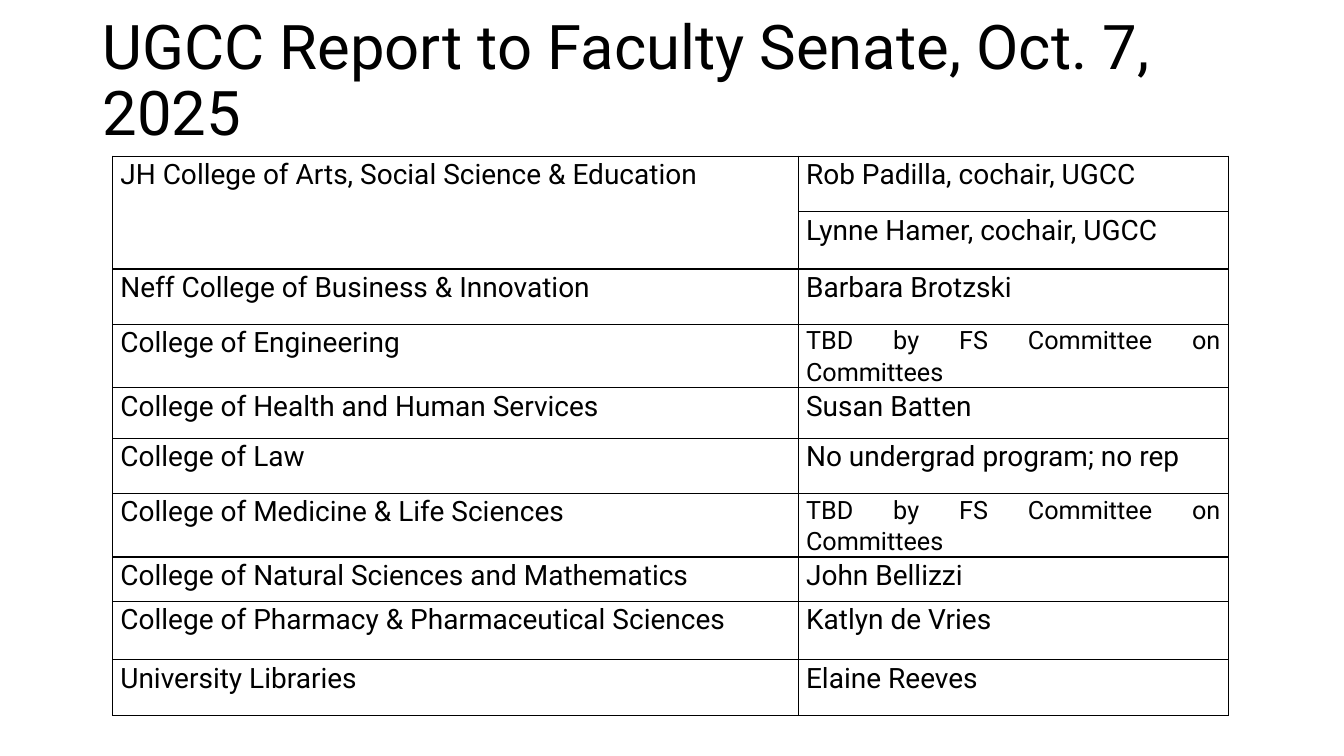
import pptx
import pptx.util
import pptx.dml.color
import pptx.enum.text
import lxml.etree
from pptx.util import Pt


def color(value):
    return pptx.dml.color.RGBColor.from_string(value)


def add_borders(cell):
    tcPr = cell._tc.get_or_add_tcPr()
    ns = "http://schemas.openxmlformats.org/drawingml/2006/main"
    for i, side in enumerate(("lnL", "lnR", "lnT", "lnB")):
        ln = lxml.etree.Element(f"{{{ns}}}{side}", w=str(Pt(1)))
        fill = lxml.etree.SubElement(ln, f"{{{ns}}}solidFill")
        lxml.etree.SubElement(fill, f"{{{ns}}}srgbClr", val="000000")
        tcPr.insert(i, ln)


prs = pptx.Presentation()
prs.slide_width, prs.slide_height = Pt(960), Pt(540)
s = prs.slides.add_slide(prs.slide_layouts[5])

title = s.shapes.title
title.left, title.top, title.width, title.height = Pt(66), Pt(31), Pt(828), Pt(56)
tf = title.text_frame
tf.text = "UGCC Report to Faculty Senate, Oct. 7, 2025"
tf.word_wrap = True
tf.auto_size = pptx.enum.text.MSO_AUTO_SIZE.NONE
tf.vertical_anchor = pptx.enum.text.MSO_ANCHOR.MIDDLE
p = tf.paragraphs[0]
p.alignment = pptx.enum.text.PP_ALIGN.LEFT
p.line_spacing = 0.9
font = p.runs[0].font
font.name, font.size = "Roboto", Pt(44)
font.color.rgb = color("000000")

TBD = "TBD by FS Committee on Committees"
members = [
    ("JH College of Arts, Social Science & Education", "Rob Padilla, cochair, UGCC", 39.6),
    ("", "Lynne Hamer, cochair, UGCC", 41),
    ("Neff College of Business & Innovation", "Barbara Brotzski", 39.6),
    ("College of Engineering", TBD, 39.6),
    ("College of Health and Human Services", "Susan Batten", 36),
    ("College of Law", "No undergrad program; no rep", 39.6),
    ("College of Medicine & Life Sciences", TBD, 39.6),
    ("College of Natural Sciences and Mathematics", "John Bellizzi", 31.7),
    ("College of Pharmacy & Pharmaceutical Sciences", "Katlyn de Vries", 41.8),
    ("University Libraries", "Elaine Reeves", 39.6),
]

frame = s.shapes.add_table(len(members), 2, Pt(80.6), Pt(111.6), Pt(796.7), Pt(388))
table = frame.table
table.first_row = table.horz_banding = False
table.columns[0].width, table.columns[1].width = Pt(489.8), Pt(306.9)
table.cell(0, 0).merge(table.cell(1, 0))

for row, (college, member, height) in enumerate(members):
    table.rows[row].height = Pt(height)
    for col, text in enumerate((college, member)):
        cell = table.cell(row, col)
        cell.margin_left = cell.margin_right = Pt(5.4)
        cell.margin_top = cell.margin_bottom = 0
        cell.fill.background()
        add_borders(cell)
        if cell.is_spanned:
            continue
        p = cell.text_frame.paragraphs[0]
        p.text = text
        p.alignment = pptx.enum.text.PP_ALIGN.JUSTIFY
        p.line_spacing = 1.07
        p.space_after = Pt(8)
        font = p.runs[0].font
        font.name = "Roboto"
        font.size = Pt(18 if text == TBD else 20)
        font.color.rgb = color("000000")

prs.save("out.pptx")
